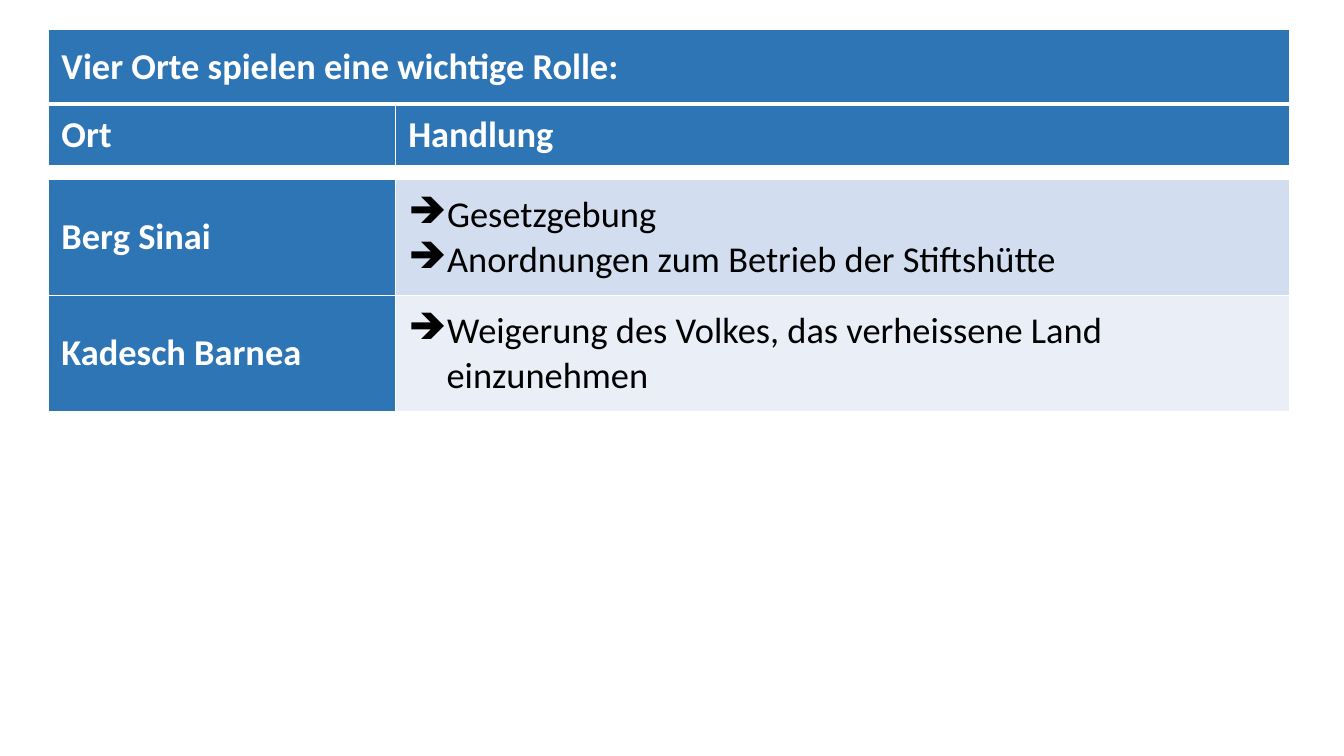
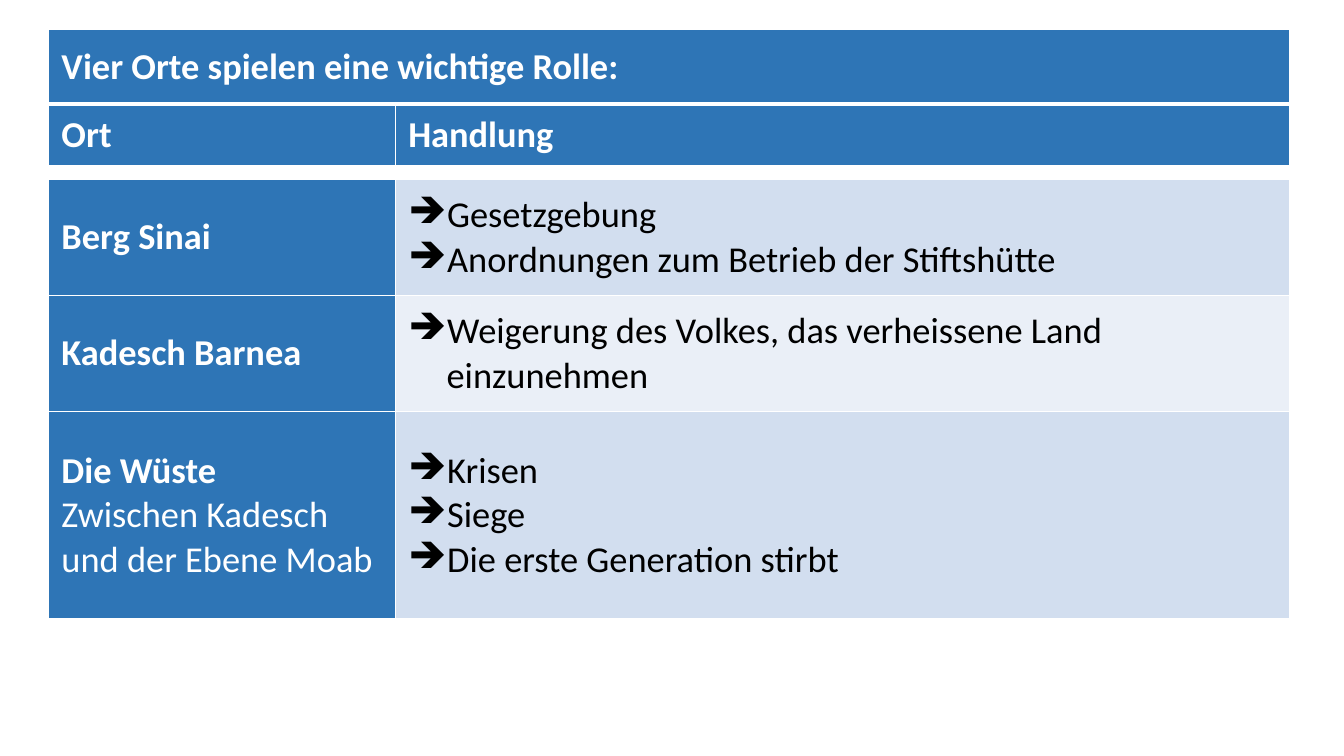
from lxml import etree
from pptx import Presentation
from pptx.dml.color import RGBColor
from pptx.enum import text
from pptx.oxml import ns
from pptx.util import Inches, Pt

# Content: place, optional note, events, row height
HEADING = "Vier Orte spielen eine wichtige Rolle:"
COLUMN_HEADS = ("Ort", "Handlung")
PLACES = [
    ("Berg Sinai", None,
     ["Gesetzgebung", "Anordnungen zum Betrieb der Stiftshütte"], 1.15),
    ("Kadesch Barnea", None,
     ["Weigerung des Volkes, das verheissene Land einzunehmen"], 1.15),
    ("Die Wüste", "Zwischen Kadesch und der Ebene Moab",
     ["Krisen", "Siege", "Die erste Generation stirbt"], 2.06),
]
PLACES_PER_SLIDE = (2, 3)

# Shared style
FONT, SIZE = "Calibri", 26
BLUE, WHITE, BLACK = "2E75B6", "FFFFFF", "000000"
BANDS = ("D2DEEF", "EAEFF7")
LEFT, TOP = 0.48, 0.29
COLUMN_WIDTHS = (3.44, 8.87)
HEAD_HEIGHTS = (0.74, 0.61, 0.14)  # heading, column heads, gap
MARGIN, INDENT = 0.13, 0.38
THIN, THICK = 1, 3


def rgb(value):
    return RGBColor.from_string(value)


def add_element(parent, tag, **attributes):
    return etree.SubElement(parent, ns.qn(tag), attributes)


def style_cell(cell, fill, top=THIN, bottom=THIN, margin=MARGIN):
    cell.margin_left = cell.margin_right = Inches(margin)
    cell.margin_top = cell.margin_bottom = 0
    cell.vertical_anchor = text.MSO_ANCHOR.MIDDLE
    properties = cell._tc.get_or_add_tcPr()
    for side, width in (("L", THIN), ("R", THIN), ("T", top), ("B", bottom)):
        border = add_element(properties, f"a:ln{side}", w=str(Pt(width)))
        border_fill = add_element(border, "a:solidFill")
        add_element(border_fill, "a:srgbClr", val=WHITE)
    cell.fill.solid()
    cell.fill.fore_color.rgb = rgb(fill)


def write(cell, lines, color=WHITE, bullet=None, align=None):
    """Fill a cell with (wording, bold) lines."""
    frame = cell.text_frame
    for index, (wording, bold) in enumerate(lines):
        line = frame.add_paragraph() if index else frame.paragraphs[0]
        line.text = wording
        if align is not None:
            line.alignment = align
        if bullet:
            properties = line._p.get_or_add_pPr()
            properties.set("marL", str(Inches(INDENT)))
            properties.set("indent", str(-Inches(INDENT)))
            add_element(properties, "a:buChar", char=bullet)
        font = line.font
        font.name, font.size, font.bold = FONT, Pt(SIZE), bold
        font.color.rgb = rgb(color)


def add_places_table(slide, places):
    heights = [*HEAD_HEIGHTS, *(place[-1] for place in places)]
    table = slide.shapes.add_table(
        len(heights), len(COLUMN_WIDTHS), Inches(LEFT), Inches(TOP),
        Inches(sum(COLUMN_WIDTHS)), Inches(sum(heights))).table
    table.first_row = table.horz_banding = False
    for column, width in zip(table.columns, COLUMN_WIDTHS):
        column.width = Inches(width)
    for row, height in zip(table.rows, heights):
        row.height = Inches(height)

    # Heading across both columns
    table.cell(0, 0).merge(table.cell(0, 1))
    write(table.cell(0, 0), [(HEADING, True)])

    # Column heads and the narrow gap below them
    for column, head in enumerate(COLUMN_HEADS):
        style_cell(table.cell(0, column), BLUE, bottom=THICK)
        style_cell(table.cell(1, column), BLUE, top=THICK)
        write(table.cell(1, column), [(head, True)],
              align=text.PP_ALIGN.JUSTIFY)
        gap = table.cell(2, column)
        style_cell(gap, WHITE, margin=0)
        add_element(gap.text_frame.paragraphs[0]._p, "a:endParaRPr", sz="200")

    # One row per place
    for index, (place, note, events, _) in enumerate(places):
        row = len(HEAD_HEIGHTS) + index
        place_cell, events_cell = table.cell(row, 0), table.cell(row, 1)
        style_cell(place_cell, BLUE)
        write(place_cell, [(place, True)] + ([(note, False)] if note else []))
        style_cell(events_cell, BANDS[index % len(BANDS)])
        write(events_cell, [(event, False) for event in events], BLACK, "➔")


def main():
    deck = Presentation()
    deck.slide_width, deck.slide_height = Inches(13.33), Inches(7.5)
    blank = deck.slide_layouts[6]
    for count in PLACES_PER_SLIDE:
        add_places_table(deck.slides.add_slide(blank), PLACES[:count])
    deck.save("out.pptx")


if __name__ == "__main__":
    main()
